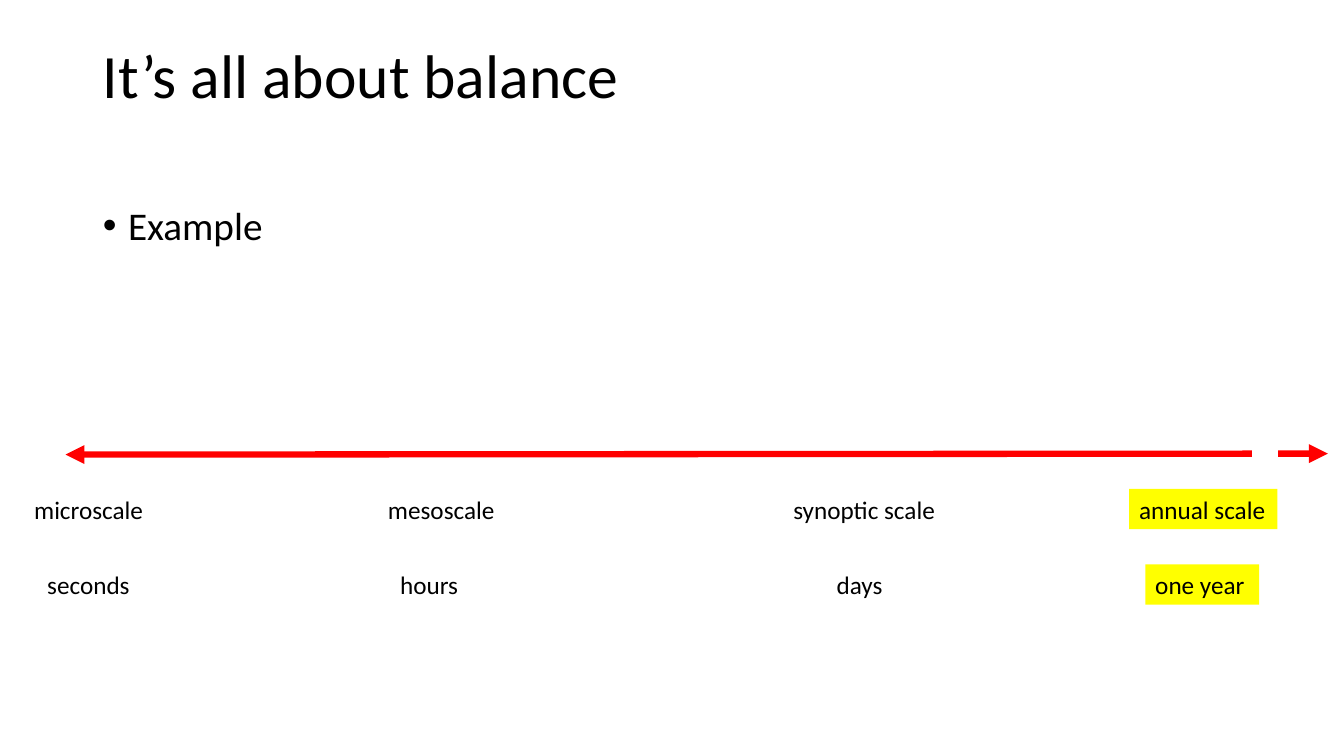
from pptx import Presentation
from pptx import util as u
from pptx.dml import color
from pptx.enum import shapes, text
from pptx.oxml import ns
from lxml import etree

FONT = "Calibri"
BLACK, WHITE, RED, YELLOW = "000000", "FFFFFF", "FF0000", "FFFF00"

# Label, left, width and fill of each scale, with its duration below
SCALES = [("microscale", 0.24, 1.29, None), ("mesoscale", 3.75, 1.27, None),
          ("synoptic scale", 7.77, 1.64, None), ("annual scale", 11.2, 1.47, YELLOW)]
DURATIONS = [("seconds", 0.37, 1.03, None), ("hours", 3.87, 0.78, None),
             ("days", 8.2, 0.66, None), ("one year", 11.36, 1.13, YELLOW)]


def rgb(value):
    return color.RGBColor.from_string(value)


def place(shape, left, top, width, height):
    shape.left, shape.top = u.Inches(left), u.Inches(top)
    shape.width, shape.height = u.Inches(width), u.Inches(height)


def write(frame, words, size, anchor=text.MSO_ANCHOR.TOP, wrap=True,
          spacing=None, before=0):
    frame.auto_size = text.MSO_AUTO_SIZE.NONE
    frame.word_wrap = wrap
    frame.vertical_anchor = anchor
    para = frame.paragraphs[0]
    para.alignment = text.PP_ALIGN.LEFT
    para.space_before = u.Pt(before)
    if spacing:
        para.line_spacing = spacing
    span = para.add_run()
    span.text = words
    span.font.name, span.font.size = FONT, u.Pt(size)
    span.font.color.rgb = rgb(BLACK)
    return para


def add_title(page, words, *box):
    title = page.shapes.title
    place(title, *box)
    write(title.text_frame, words, 44, spacing=0.9)


def add_body(page, words, *box):
    body = page.placeholders[1]
    place(body, *box)
    para = write(body.text_frame, words, 28, spacing=0.9, before=10)
    # Bullet with a hanging indent
    props = para._p.get_or_add_pPr()
    props.set("marL", str(u.Inches(0.25)))
    props.set("indent", str(u.Inches(-0.25)))
    etree.SubElement(props, ns.qn("a:buFont")).set("typeface", "Arial")
    etree.SubElement(props, ns.qn("a:buChar")).set("char", "•")


def add_label_row(page, top, labels, height=0.4):
    for words, left, width, fill in labels:
        label = page.shapes.add_textbox(0, 0, 0, 0)
        place(label, left, top, width, height)
        if fill:
            label.fill.solid()
            label.fill.fore_color.rgb = rgb(fill)
        write(label.text_frame, words, 18, wrap=False)


def add_time_axis(page, left, top, width, rise):
    axis = page.shapes.add_connector(
        shapes.MSO_CONNECTOR.STRAIGHT, u.Inches(left), u.Inches(top + rise),
        u.Inches(left + width), u.Inches(top))
    axis.line.color.rgb = rgb(RED)
    axis.line.width = u.Pt(4.5)
    line = axis.line._get_or_add_ln()
    for end in ("a:headEnd", "a:tailEnd"):
        etree.SubElement(line, ns.qn(end)).set("type", "triangle")
    etree.SubElement(axis._element.spPr, ns.qn("a:effectLst"))

    # White gap that breaks the axis before its right end
    gap = page.shapes.add_shape(shapes.MSO_SHAPE.RECTANGLE, 0, 0, 0, 0)
    place(gap, left + width - 0.75, top - 0.18, 0.25, 0.34)
    gap.shadow.inherit = False
    gap.fill.solid()
    gap.fill.fore_color.rgb = rgb(WHITE)
    gap.line.color.rgb = rgb(WHITE)
    gap.line.width = u.Pt(1)


def main():
    deck = Presentation()
    deck.slide_width, deck.slide_height = u.Inches(13.33), u.Inches(7.5)
    page = deck.slides.add_slide(deck.slide_layouts[1])

    # Title and list
    add_title(page, "It’s all about balance", 0.92, 0.4, 11.5, 1.45)
    add_body(page, "Example", 0.92, 2, 11.5, 4.76)

    # Time axis with its two rows of labels
    add_time_axis(page, 0.65, 4.5, 12.52, 0.01)
    for row, labels in enumerate((SCALES, DURATIONS)):
        add_label_row(page, 4.85 + 0.75 * row, labels)

    deck.save("out.pptx")


if __name__ == "__main__":
    main()
